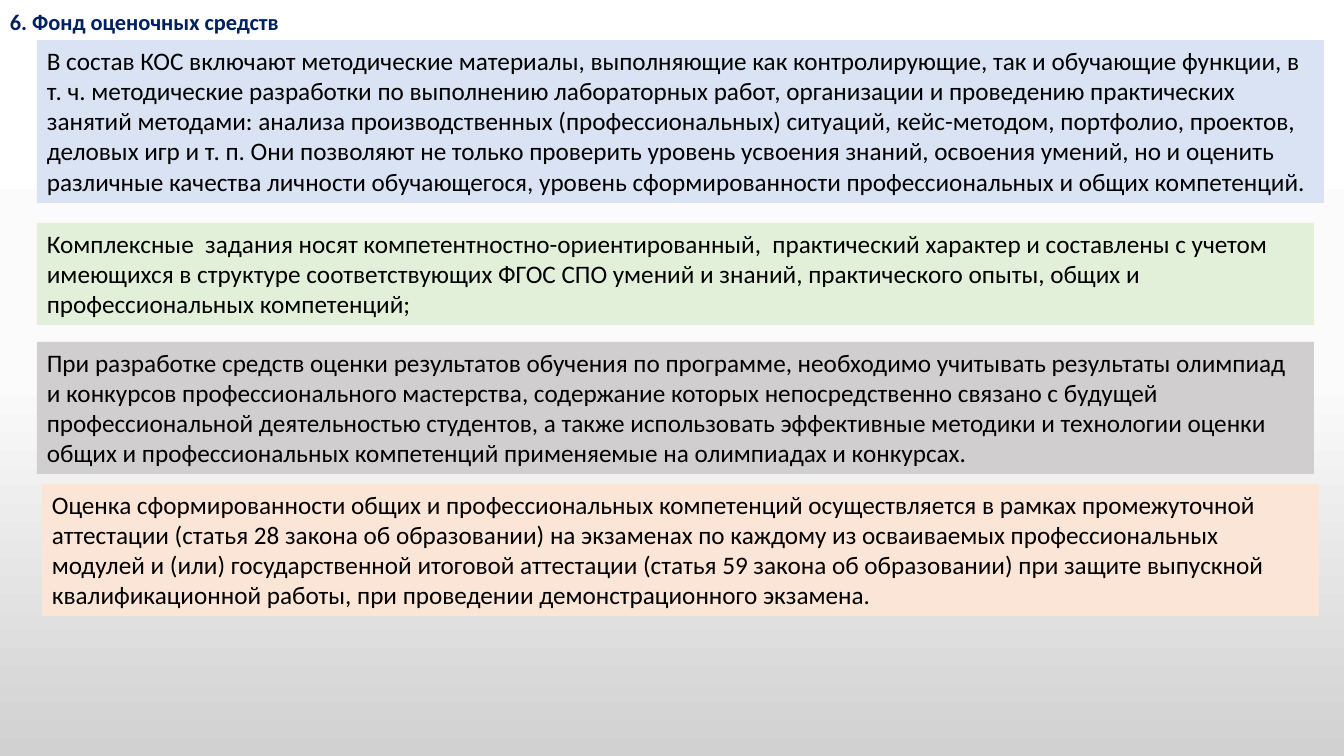
import copy

import pptx
import pptx.dml.color
import pptx.enum.text
import pptx.oxml.ns
import pptx.util

RGB = pptx.dml.color.RGBColor
NAVY = RGB(0x00, 0x20, 0x60)
BLACK = RGB(0x00, 0x00, 0x00)
BLUE = RGB(0xDA, 0xE3, 0xF3)
GREEN = RGB(0xE2, 0xF0, 0xD9)
GREY = RGB(0xD0, 0xCE, 0xCE)
ORANGE = RGB(0xFB, 0xE5, 0xD6)
BACKGROUND = [(0, RGB(0xFF, 0xFF, 0xFF)), (0.5, RGB(0xFB, 0xFB, 0xFB)),
              (1, RGB(0xD1, 0xD1, 0xD1))]

FONT = "Calibri"
EMU_PER_PX = 914400 / 100.8

TITLE = "6. Фонд оценочных средств"
TITLE_BOX = (0, 3, 1324, 37)

# (left, top, width, height) in px, fill, text
PANELS = [
    ((37, 40, 1287, 163), BLUE,
     "В состав КОС включают методические материалы, выполняющие как контролирующие, "
     "так и обучающие функции, в т. ч. методические разработки по выполнению "
     "лабораторных работ, организации и проведению практических занятий методами: "
     "анализа производственных (профессиональных) ситуаций, кейс-методом, портфолио, "
     "проектов, деловых игр и т. п. Они позволяют не только проверить уровень усвоения "
     "знаний, освоения умений, но и оценить различные качества личности обучающегося, "
     "уровень сформированности профессиональных и общих компетенций."),
    ((37, 223, 1277, 102), GREEN,
     "Комплексные  задания носят компетентностно-ориентированный,  практический "
     "характер и составлены с учетом имеющихся в структуре соответствующих ФГОС СПО "
     "умений и знаний, практического опыты, общих и профессиональных компетенций;"),
    ((37, 342, 1277, 132), GREY,
     "При разработке средств оценки результатов обучения по программе, необходимо "
     "учитывать результаты олимпиад и конкурсов профессионального мастерства, "
     "содержание которых непосредственно связано с будущей профессиональной "
     "деятельностью студентов, а также использовать эффективные методики и технологии "
     "оценки общих и профессиональных компетенций применяемые на олимпиадах и конкурсах."),
    ((42, 484, 1277, 132), ORANGE,
     "Оценка сформированности общих и профессиональных компетенций осуществляется в "
     "рамках промежуточной аттестации (статья 28 закона об образовании) на экзаменах "
     "по каждому из осваиваемых профессиональных модулей и (или) государственной "
     "итоговой аттестации (статья 59 закона об образовании) при защите выпускной "
     "квалификационной работы, при проведении демонстрационного экзамена."),
]


def px(n):
    return round(n * EMU_PER_PX)


def set_background(s):
    fill = s.background.fill
    fill.gradient()
    fill.gradient_angle = 270  # counter-clockwise, so the light end is on top
    stops = s._element.find(".//" + pptx.oxml.ns.qn("a:gsLst"))
    stops.insert(1, copy.deepcopy(stops[0]))
    for stop, (position, color) in zip(fill.gradient_stops, BACKGROUND):
        stop.position = position
        stop.color.rgb = color


def add_text(s, box, text, size, color, bold=False):
    sp = s.shapes.add_textbox(*map(px, box))
    tf = sp.text_frame
    tf.word_wrap = True
    tf.auto_size = pptx.enum.text.MSO_AUTO_SIZE.SHAPE_TO_FIT_TEXT
    tf.text = text
    font = tf.paragraphs[0].runs[0].font
    font.name = FONT
    font.size = pptx.util.Pt(size)
    font.bold = bold
    font.color.rgb = color
    return sp


def main():
    prs = pptx.Presentation()
    prs.slide_width, prs.slide_height = px(1344), px(756)
    s = prs.slides.add_slide(prs.slide_layouts[6])
    set_background(s)
    add_text(s, TITLE_BOX, TITLE, 16, NAVY, bold=True)
    for box, color, text in PANELS:
        sp = add_text(s, box, text, 18, BLACK)
        sp.fill.solid()
        sp.fill.fore_color.rgb = color
    prs.save("out.pptx")


if __name__ == "__main__":
    main()
